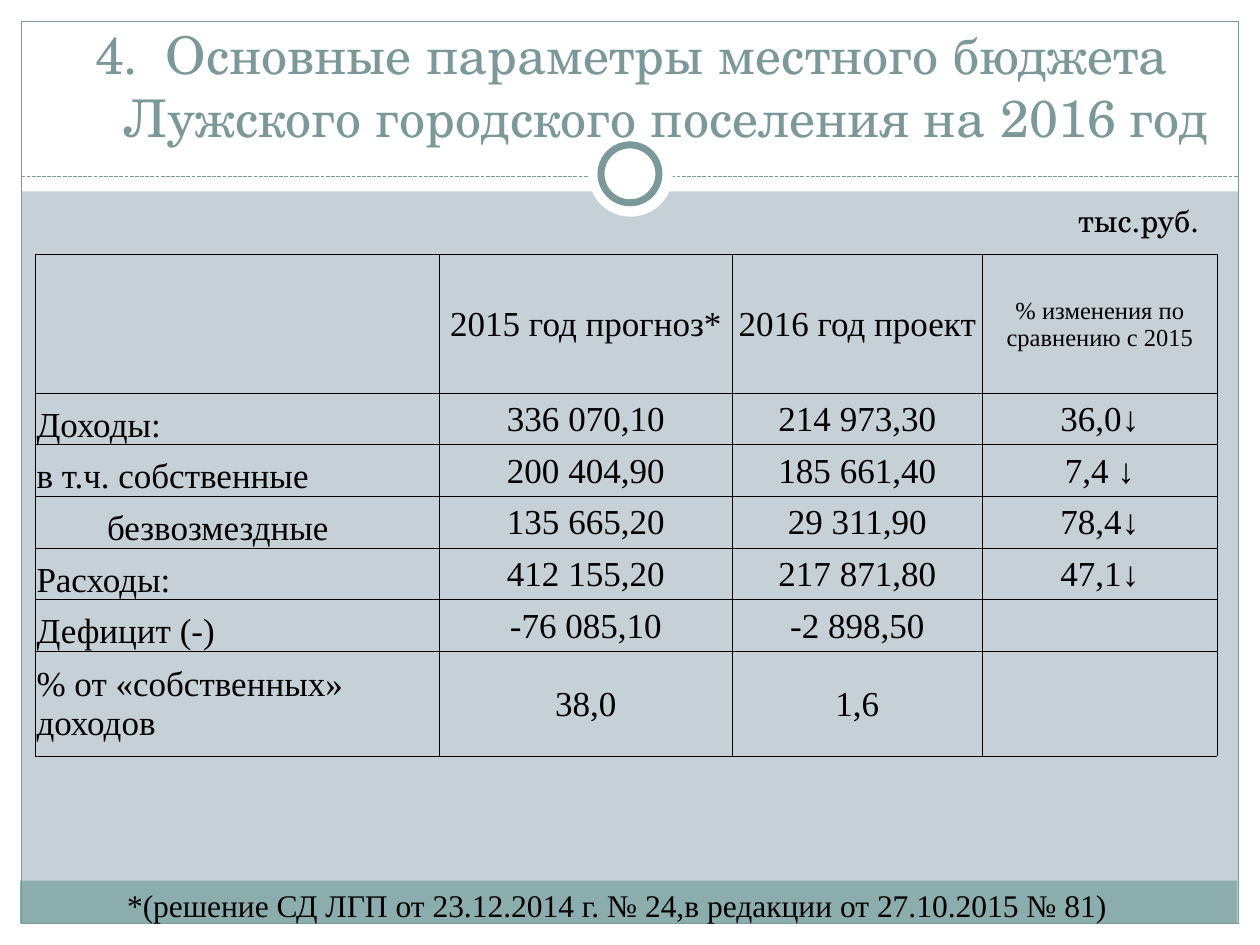
from lxml.etree import SubElement
from pptx import Presentation
from pptx.dml.color import RGBColor
from pptx.enum.dml import MSO_LINE
from pptx.enum.shapes import MSO_CONNECTOR, MSO_SHAPE
from pptx.enum.text import MSO_ANCHOR as Anchor, PP_ALIGN as Align
from pptx.oxml import parse_xml
from pptx.oxml.ns import nsdecls, qn
from pptx.util import Inches, Pt

WHITE, BLACK, TEAL, BAND, GROUND = "FFFFFF", "000000", "7C999A", "8CADAE", "C5D1D7"
SERIF, SCHOOL = "Times New Roman", "TeX Gyre Schola"


def color(value):
    return RGBColor.from_string(value)


def apply(target, **values):
    for name, value in values.items():
        setattr(target, name, value)


class SlideBuilder:
    """Holds the style and the slide being drawn."""

    text_format = {"size": 20, "name": SERIF, "color": BLACK}
    cell_margins = {"margin_left": Inches(0.01), "margin_right": Inches(0.01),
                    "margin_top": Inches(0.01), "margin_bottom": 0}

    def __init__(self, slide, background):
        self.slide = slide
        fill = slide.background.fill
        fill.solid()
        fill.fore_color.rgb = color(background)

    def shape(self, kind, box, fill=None, line=None, width=0.75):
        shape = self.slide.shapes.add_shape(kind, *map(Inches, box))
        shape.shadow.inherit = False
        for part, value in ((shape.fill, fill), (shape.line.fill, line)):
            if value:
                part.solid()
                part.fore_color.rgb = color(value)
            else:
                part.background()
        if line:
            shape.line.width = Pt(width)
        return shape

    def dashed_line(self, start, end, line, width=0.75):
        connector = self.slide.shapes.add_connector(
            MSO_CONNECTOR.STRAIGHT, *map(Inches, start + end))
        connector.line.color.rgb = color(line)
        apply(connector.line, width=Pt(width), dash_style=MSO_LINE.SQUARE_DOT)
        SubElement(connector._element.spPr, qn("a:effectLst"))

    def fill_frame(self, frame, text, align=Align.LEFT, **changes):
        style = {**self.text_format, **changes}
        paragraph = frame.paragraphs[0]
        paragraph.alignment = align
        run = paragraph.add_run()
        run.text = text
        apply(run.font, size=Pt(style["size"]), name=style["name"])
        run.font.color.rgb = color(style["color"])
        return paragraph

    def text(self, box, text, wrap=False, anchor=Anchor.TOP, **changes):
        frame = self.slide.shapes.add_textbox(*map(Inches, box)).text_frame
        apply(frame, word_wrap=wrap, vertical_anchor=anchor)
        return self.fill_frame(frame, text, **changes)

    def indent(self, paragraph, left, first=0.0):
        properties = paragraph._p.get_or_add_pPr()
        properties.set("marL", str(Inches(left)))
        properties.set("indent", str(Inches(first)))
        return properties

    def number(self, paragraph, start, hang):
        properties = self.indent(paragraph, hang, -hang)
        SubElement(properties, qn("a:buFont"), typeface="+mj-lt")
        SubElement(properties, qn("a:buAutoNum"), type="arabicPeriod", startAt=str(start))

    def borders(self, cell, line, width):
        properties = cell._tc.get_or_add_tcPr()
        for index, side in enumerate(("lnL", "lnR", "lnT", "lnB")):
            properties.insert(index, parse_xml(
                f'<a:{side} {nsdecls("a")} w="{Pt(width)}"><a:solidFill>'
                f'<a:srgbClr val="{line}"/></a:solidFill></a:{side}>'))

    def table(self, box, columns, heights, rows):
        table = self.slide.shapes.add_table(
            len(rows), len(columns), *map(Inches, box)).table
        apply(table, first_row=False, horz_banding=False)
        for column, width in zip(table.columns, columns):
            column.width = Inches(width)
        for row, height, values in zip(table.rows, heights, rows):
            row.height = Inches(height)
            for cell, value in zip(row.cells, values):
                apply(cell, vertical_anchor=Anchor.MIDDLE, **self.cell_margins)
                cell.fill.background()
                self.borders(cell, BLACK, 0.5)
                if value:
                    self.fill_frame(cell.text_frame, value, Align.CENTER)
        return table


def main():
    presentation = Presentation()
    apply(presentation, slide_width=Inches(10), slide_height=Inches(7.5))
    slide = presentation.slides.add_slide(presentation.slide_layouts[6])
    builder = SlideBuilder(slide, GROUND)

    # White margins, footer band and frame
    for box in ((0, 7.33, 10, 0.17), (0, 0, 10, 1.52),
                (0, 0, 0.17, 7.5), (9.83, 0, 0.17, 7.5)):
        builder.shape(MSO_SHAPE.RECTANGLE, box, WHITE)
    builder.shape(MSO_SHAPE.RECTANGLE, (0.16, 6.99, 9.66, 0.34), BAND)
    builder.shape(MSO_SHAPE.RECTANGLE, (0.17, 0.17, 9.66, 7.16), line=TEAL)

    # Divider with ring
    builder.dashed_line((0.17, 1.4), (9.83, 1.4), TEAL)
    builder.shape(MSO_SHAPE.OVAL, (4.67, 1.05, 0.67, 0.67), WHITE)
    builder.shape(MSO_SHAPE.OVAL, (4.77, 1.15, 0.46, 0.46), WHITE, TEAL, 4)

    # Title
    title = builder.text(
        (0.28, 0, 9.47, 1.22),
        "Основные параметры местного бюджета Лужского городского поселения на 2016 год",
        wrap=True, anchor=Anchor.BOTTOM, align=Align.CENTER,
        size=29.7, name=SCHOOL, color=TEAL)
    builder.number(title, 4, 0.56)

    # Budget table
    rows = [
        ("", "2015 год прогноз*", "2016 год проект", "% изменения по сравнению с 2015"),
        ("Доходы:", "336 070,10", "214 973,30", "36,0↓"),
        ("в т.ч. собственные", "200 404,90", "185 661,40", "7,4 ↓"),
        ("безвозмездные", "135 665,20", "29 311,90", "78,4↓"),
        ("Расходы:", "412 155,20", "217 871,80", "47,1↓"),
        ("Дефицит (-)", "-76 085,10", "-2 898,50", ""),
        ("% от «собственных» доходов", "38,0", "1,6", ""),
    ]
    heights = [1.1] + [0.41] * 5 + [0.83]
    table = builder.table((0.28, 2.02, 9.37, 4), (3.21, 2.32, 1.99, 1.86), heights, rows)

    # Row labels stand left, single-line ones at the bottom
    for index in range(1, len(rows)):
        label = table.cell(index, 0)
        label.text_frame.paragraphs[0].alignment = Align.LEFT
        if index < len(rows) - 1:
            label.vertical_anchor = Anchor.BOTTOM
    builder.indent(table.cell(3, 0).text_frame.paragraphs[0], 0.56)
    table.cell(0, 3).text_frame.paragraphs[0].runs[0].font.size = Pt(14)

    # Unit and footnote
    builder.text((8.46, 1.55, 1.17, 0.4), "тыс.руб.", size=18, name=SCHOOL)
    builder.text((0.91, 6.98, 8.12, 0.4),
                 "*(решение СД ЛГП от 23.12.2014 г. № 24,в редакции от 27.10.2015 № 81)",
                 size=18)

    presentation.save("out.pptx")


if __name__ == "__main__":
    main()
